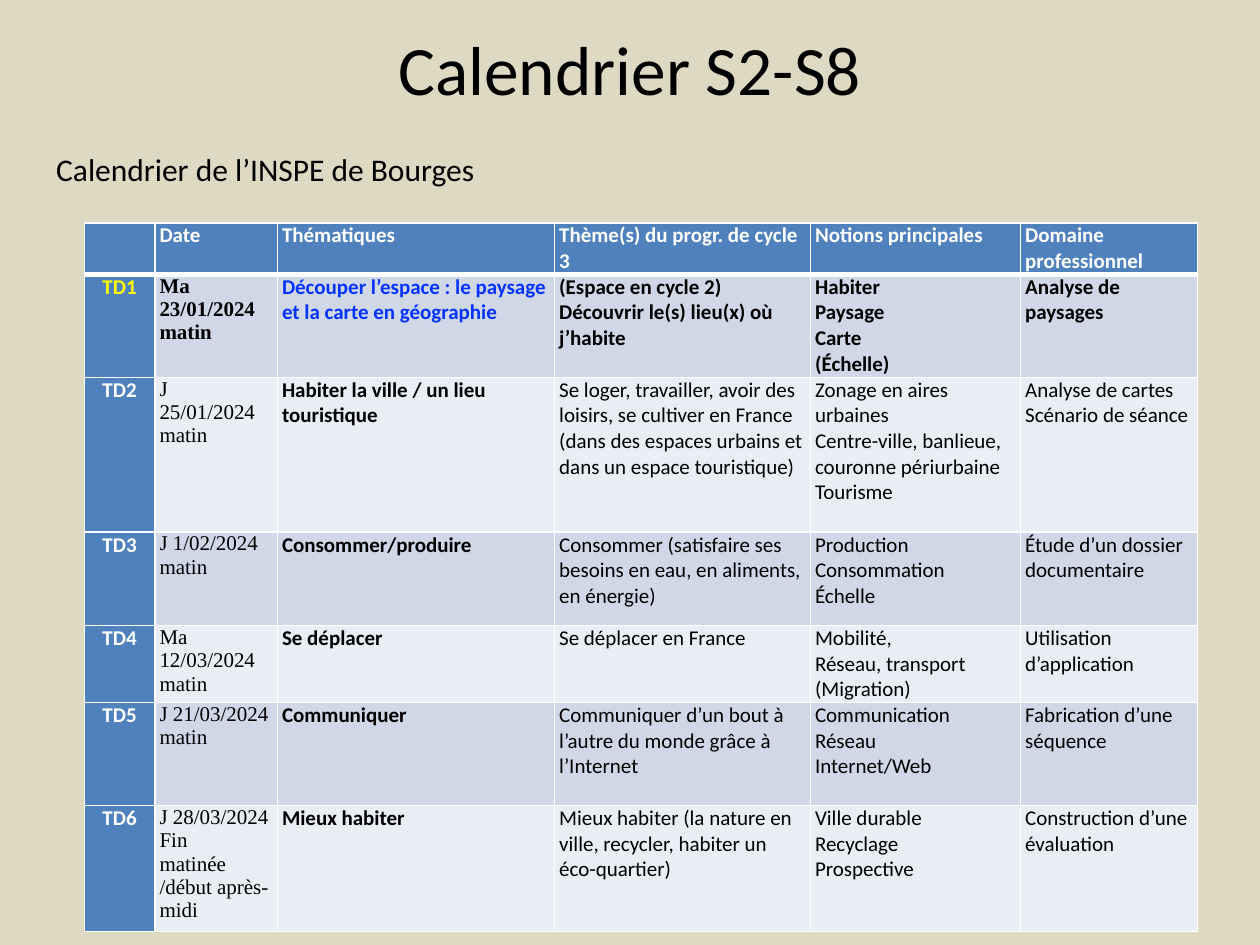
from dataclasses import dataclass

from lxml.etree import SubElement as Sub
from pptx import Presentation
from pptx.dml.color import RGBColor as Rgb
from pptx.enum.text import MSO_ANCHOR as Anchor, PP_ALIGN as Align
from pptx.oxml.ns import qn
from pptx.util import Pt


@dataclass(frozen=True)
class Theme:
    back: str = "DDD9C3"
    head: str = "4F81BD"
    odd: str = "D0D8E8"
    even: str = "E9EDF4"
    white: str = "FFFFFF"
    black: str = "000000"
    blue: str = "0432FF"
    gold: str = "FFFF00"
    sans: str = "Calibri"
    serif: str = "Times New Roman"
    title: float = 39.6
    sub: float = 18
    cell: float = 12


T = Theme()
COLS = [40.3, 70, 158.4, 146.2, 120.1, 101.2]
HEIGHTS = [29.4, 58.9, 88.4, 53.5, 44, 58.9, 72]
ROWS = [
    ["", "Date", "Thématiques", "Thème(s) du progr. de cycle 3",
     "Notions principales", "Domaine professionnel"],
    ["TD1", "Ma 23/01/2024\nmatin",
     "Découper l’espace : le paysage et la carte en géographie",
     "(Espace en cycle 2)\nDécouvrir le(s) lieu(x) où j’habite",
     "Habiter\nPaysage\nCarte\n(Échelle)", "Analyse de paysages"],
    ["TD2", "J\n25/01/2024\nmatin", "Habiter la ville / un lieu touristique",
     "Se loger, travailler, avoir des loisirs, se cultiver en France "
     "(dans des espaces urbains et dans un espace touristique)",
     "Zonage en aires urbaines\nCentre-ville, banlieue, couronne périurbaine\nTourisme",
     "Analyse de cartes\nScénario de séance"],
    ["TD3", "J 1/02/2024\nmatin", "Consommer/produire",
     "Consommer (satisfaire ses besoins en eau, en aliments, en énergie)",
     "Production\nConsommation\nÉchelle", "Étude d’un dossier documentaire"],
    ["TD4", "Ma 12/03/2024\nmatin", "Se déplacer", "Se déplacer en France",
     "Mobilité,\nRéseau, transport\n(Migration)", "Utilisation d’application"],
    ["TD5", "J 21/03/2024\nmatin", "Communiquer",
     "Communiquer d’un bout à l’autre du monde grâce à l’Internet",
     "Communication\nRéseau\nInternet/Web", "Fabrication d’une séquence"],
    ["TD6", "J 28/03/2024\nFin matinée /début après-midi", "Mieux habiter",
     "Mieux habiter (la nature en ville, recycler, habiter un éco-quartier)",
     "Ville durable\nRecyclage\nProspective", "Construction d’une évaluation"],
]


def write(frame, text, size=T.cell, font=T.sans, color=T.black, bold=False,
          align=Align.LEFT):
    for i, line in enumerate(text.split("\n")):
        para = frame.paragraphs[0] if i == 0 else frame.add_paragraph()
        para.alignment = align
        para.font.size = Pt(size)
        if line:
            run = para.add_run()
            run.text = line
            run.font.size = Pt(size)
            run.font.name = font
            run.font.bold = bold
            run.font.color.rgb = Rgb.from_string(color)


def label(slide, box, text, wrap=True, anchor=Anchor.TOP, **form):
    frame = slide.shapes.add_textbox(*map(Pt, box)).text_frame
    frame.word_wrap = wrap
    frame.vertical_anchor = anchor
    write(frame, text, **form)


def border(cell, row):
    props = cell._tc.get_or_add_tcPr()
    for side in "LRTB":
        thick = (row, side) in ((0, "B"), (1, "T"))
        line = Sub(props, qn(f"a:ln{side}"), w=str(Pt(3 if thick else 1)))
        fill = Sub(line, qn("a:solidFill"))
        Sub(fill, qn("a:srgbClr"), val=T.white)


def style(row, col):
    head = row == 0 or col == 0
    color = T.white if head else T.black
    if row == 1 and col in (0, 2):
        color = T.gold if col == 0 else T.blue
    return dict(
        color=color,
        bold=head or row == 1 or col == 2,
        font=T.serif if col == 1 and row else T.sans,
        align=Align.CENTER if col == 0 else Align.LEFT,
    )


def paint(cell, row, col):
    border(cell, row)
    cell.fill.solid()
    band = T.odd if row % 2 else T.even
    cell.fill.fore_color.rgb = Rgb.from_string(T.head if 0 in (row, col) else band)
    cell.margin_left = cell.margin_right = Pt(2.7)
    cell.margin_top = cell.margin_bottom = Pt(0)
    write(cell.text_frame, ROWS[row][col], **style(row, col))


def grid(slide, left, top):
    size = map(Pt, (left, top, sum(COLS), sum(HEIGHTS)))
    table = slide.shapes.add_table(len(ROWS), len(COLS), *size).table
    table.horz_banding = False
    for col, width in zip(table.columns, COLS):
        col.width = Pt(width)
    for r, height in enumerate(HEIGHTS):
        table.rows[r].height = Pt(height)
        for c in range(len(COLS)):
            paint(table.cell(r, c), r, c)


def main():
    deck = Presentation()
    deck.slide_width, deck.slide_height = Pt(720), Pt(540)
    slide = deck.slides.add_slide(deck.slide_layouts[6])
    slide.background.fill.solid()
    slide.background.fill.fore_color.rgb = Rgb.from_string(T.back)
    label(slide, (36, 11.5, 648, 54), "Calendrier S2-S8", anchor=Anchor.MIDDLE,
          size=T.title, align=Align.CENTER)
    label(slide, (25, 82, 256, 29), "Calendrier de l’INSPE de Bourges",
          wrap=False, size=T.sub)
    grid(slide, 48.2, 127.4)
    deck.save("out.pptx")


if __name__ == "__main__":
    main()
